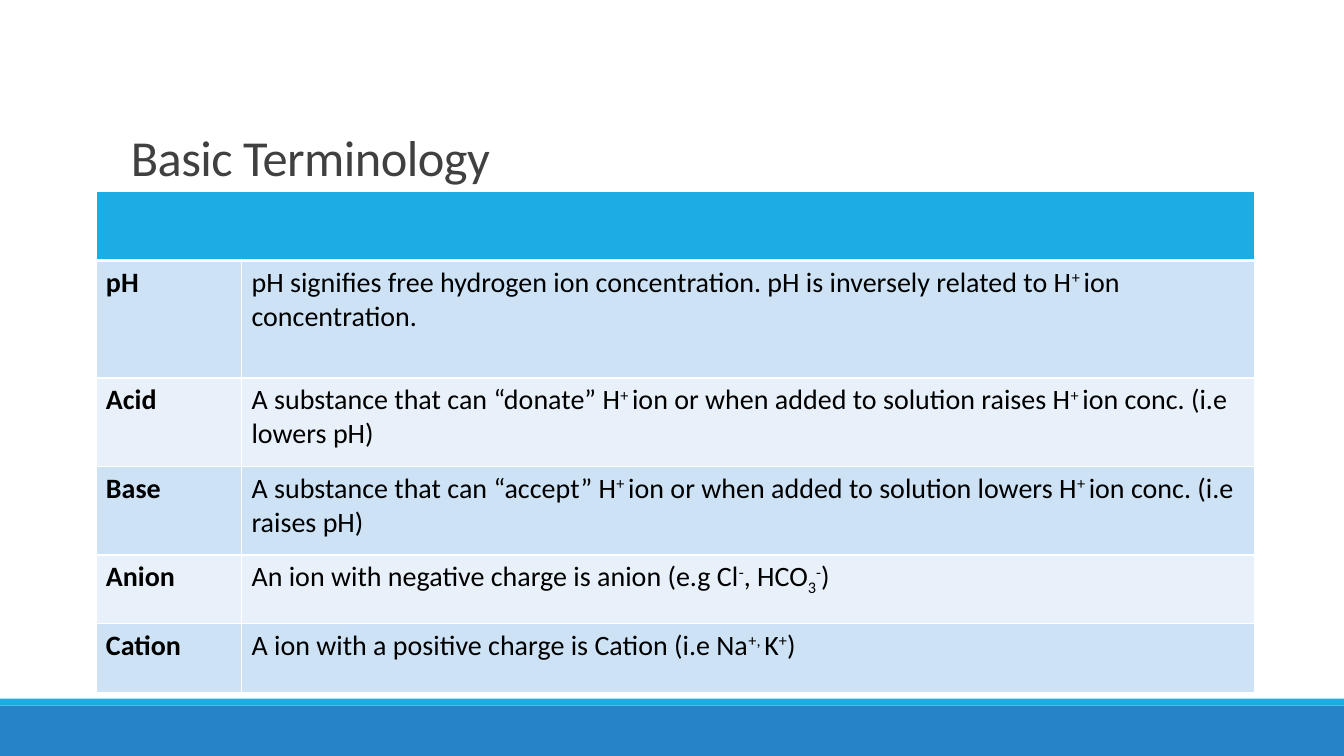
from dataclasses import dataclass

import pptx
import pptx.dml.color
import pptx.enum.shapes
import pptx.enum.text
import pptx.oxml
import pptx.oxml.ns
import pptx.util

Pt = pptx.util.Pt

COLORS = {
    "header": "1CADE4",
    "footer": "2683C6",
    "dark_row": "CDE3F5",
    "light_row": "E8F1FA",
    "border": "FFFFFF",
    "title": "404040",
    "body": "000000",
}
FONT = "Calibri"
SUPER, SUB = 30, -25  # baseline shift in percent


@dataclass(frozen=True)
class Bar:
    top: float
    height: float
    color: str


@dataclass(frozen=True)
class Piece:
    text: str
    baseline: int = 0


@dataclass(frozen=True)
class Term:
    name: str
    height: float
    definition: tuple[Piece, ...]


SLIDE_WIDTH, SLIDE_HEIGHT = 960, 540
BARS = [Bar(504, 36, "footer"), Bar(499, 5, "header")]
TABLE_LEFT, TABLE_TOP = 68.5, 137
COLUMN_WIDTHS = [104, 723.5]
HEADER_HEIGHT = 49

PLUS = Piece("+ ", SUPER)
MINUS = Piece("-", SUPER)
TERMS = [
    Term("pH", 84, (
        Piece("pH signifies free hydrogen ion concentration. pH is inversely related to H"),
        PLUS, Piece("ion concentration."))),
    Term("Acid", 63.25, (
        Piece("A substance that can “donate” H"), PLUS,
        Piece("ion or when added to solution raises H"), PLUS,
        Piece("ion conc. (i.e lowers pH)"))),
    Term("Base", 63.25, (
        Piece("A substance that can “accept” H"), PLUS,
        Piece("ion or when added to solution lowers H"), PLUS,
        Piece("ion conc. (i.e raises pH)"))),
    Term("Anion", 49, (
        Piece("An ion with negative charge is anion (e.g Cl"), MINUS,
        Piece(", HCO"), Piece("3", SUB), MINUS, Piece(")"))),
    Term("Cation", 49, (
        Piece("A ion with a positive charge is Cation (i.e Na"),
        Piece("+, ", SUPER), Piece("K"), Piece("+", SUPER), Piece(")"))),
]


def rgb(name: str) -> pptx.dml.color.RGBColor:
    return pptx.dml.color.RGBColor.from_string(COLORS[name])


def add_run(paragraph, piece: Piece, size: float, color: str, bold: bool = False):
    run = paragraph.add_run()
    run.text = piece.text
    run.font.name = FONT
    run.font.size = Pt(size)
    run.font.bold = bold
    run.font.color.rgb = rgb(color)
    if piece.baseline:
        run.font._element.set("baseline", str(piece.baseline * 1000))
    return run


def add_bar(slide, bar: Bar) -> None:
    band = slide.shapes.add_shape(
        pptx.enum.shapes.MSO_SHAPE.RECTANGLE,
        Pt(0), Pt(bar.top), Pt(SLIDE_WIDTH), Pt(bar.height))
    band.shadow.inherit = False
    band.fill.solid()
    band.fill.fore_color.rgb = rgb(bar.color)
    band.line.fill.background()


def add_title(slide, text: str) -> None:
    frame = slide.shapes.add_textbox(Pt(86.4), Pt(22.5), Pt(792), Pt(114.5)).text_frame
    frame.word_wrap = True
    frame.vertical_anchor = pptx.enum.text.MSO_ANCHOR.BOTTOM
    paragraph = frame.paragraphs[0]
    paragraph.line_spacing = 0.85
    heading = add_run(paragraph, Piece(text), 36, "title")
    heading.font._element.set("spc", "-40")


def style_cell(cell, fill: str, bottom: float = 1, top: float = 1) -> None:
    """Set the fill and the white borders, with widths in points."""
    cell.fill.solid()
    cell.fill.fore_color.rgb = rgb(fill)
    properties = cell._tc.get_or_add_tcPr()
    widths = {"lnL": 1, "lnR": 1, "lnT": top, "lnB": bottom}
    for position, (side, width) in enumerate(widths.items()):
        properties.insert(position, pptx.oxml.parse_xml(
            f'<a:{side} {pptx.oxml.ns.nsdecls("a")} w="{Pt(width)}"><a:solidFill>'
            f'<a:srgbClr val="{COLORS["border"]}"/></a:solidFill></a:{side}>'))


def add_terms(slide, terms: list[Term]) -> None:
    heights = [HEADER_HEIGHT] + [term.height for term in terms]
    table = slide.shapes.add_table(
        len(heights), len(COLUMN_WIDTHS), Pt(TABLE_LEFT), Pt(TABLE_TOP),
        Pt(sum(COLUMN_WIDTHS)), Pt(sum(heights))).table
    for column, width in zip(table.columns, COLUMN_WIDTHS):
        column.width = Pt(width)
    for row, height in zip(table.rows, heights):
        row.height = Pt(height)

    for cell in table.rows[0].cells:
        style_cell(cell, "header", bottom=3)
    table.cell(0, 0).merge(table.cell(0, 1))

    for index, term in enumerate(terms, start=1):
        contents = ((Piece(term.name),), term.definition)
        for column, pieces in enumerate(contents):
            cell = table.cell(index, column)
            style_cell(cell, "dark_row" if index % 2 else "light_row",
                       top=3 if index == 1 else 1)
            for piece in pieces:
                add_run(cell.text_frame.paragraphs[0], piece, 20, "body",
                        bold=column == 0)


def main() -> None:
    deck = pptx.Presentation()
    deck.slide_width, deck.slide_height = Pt(SLIDE_WIDTH), Pt(SLIDE_HEIGHT)
    slide = deck.slides.add_slide(deck.slide_layouts[6])
    for bar in BARS:
        add_bar(slide, bar)
    add_title(slide, "Basic Terminology")
    add_terms(slide, TERMS)
    deck.save("out.pptx")


if __name__ == "__main__":
    main()
